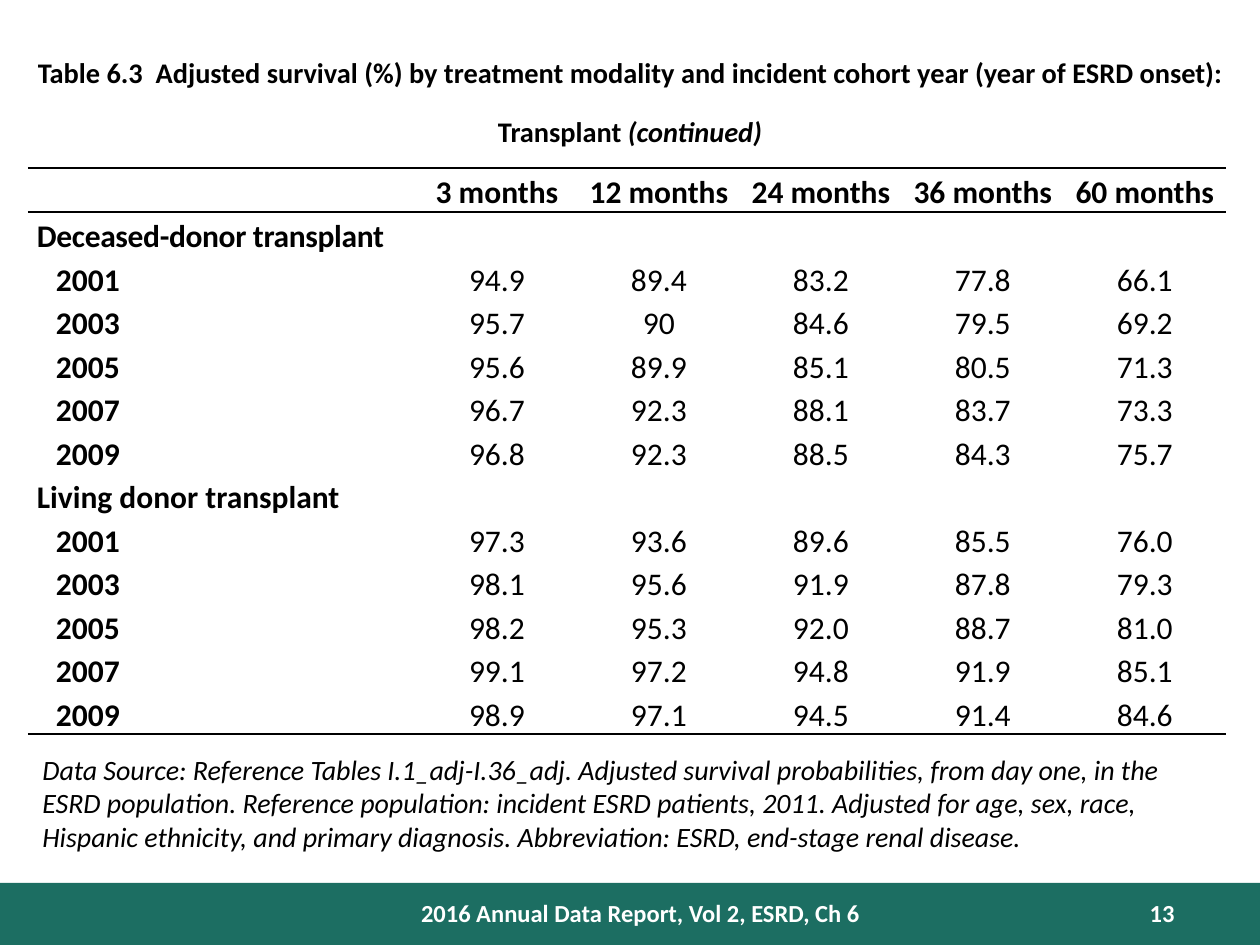
from dataclasses import dataclass

from lxml.etree import SubElement
from pptx import Presentation
from pptx.dml.color import RGBColor
from pptx.enum.shapes import MSO_SHAPE
from pptx.enum.text import MSO_ANCHOR, MSO_AUTO_SIZE, PP_ALIGN
from pptx.oxml.ns import qn
from pptx.util import Emu, Pt

PIXELS_PER_INCH = 126
FONT = "Calibri"
COLORS = {"text": "000000", "bar": "1C6E62", "bar_text": "FFFFFF"}
NO_GRID_STYLE = "{2D5ABB26-0587-4C30-8999-92F81FD0307C}"
LABEL_WIDTH, VALUE_WIDTH = 388, 162
HEADER_HEIGHT, ROW_HEIGHT = 44, 43
MONTHS = ["3 months", "12 months", "24 months", "36 months", "60 months"]


@dataclass
class Caption:
    text: str
    box: tuple[int, int, int, int]
    size: int
    color: str
    align: PP_ALIGN
    bold: bool = False
    italic: bool = False
    anchor: MSO_ANCHOR = MSO_ANCHOR.TOP


@dataclass
class Group:
    label: str
    spacing: int
    survival: dict[str, list[str]]


GROUPS = [
    Group("Deceased-donor transplant", -20, {
        "2001": ["94.9", "89.4", "83.2", "77.8", "66.1"],
        "2003": ["95.7", "90", "84.6", "79.5", "69.2"],
        "2005": ["95.6", "89.9", "85.1", "80.5", "71.3"],
        "2007": ["96.7", "92.3", "88.1", "83.7", "73.3"],
        "2009": ["96.8", "92.3", "88.5", "84.3", "75.7"],
    }),
    Group("Living donor transplant", 0, {
        "2001": ["97.3", "93.6", "89.6", "85.5", "76.0"],
        "2003": ["98.1", "95.6", "91.9", "87.8", "79.3"],
        "2005": ["98.2", "95.3", "92.0", "88.7", "81.0"],
        "2007": ["99.1", "97.2", "94.8", "91.9", "85.1"],
        "2009": ["98.9", "97.1", "94.5", "91.4", "84.6"],
    }),
]

CAPTIONS = [
    Caption("2016 Annual Data Report, Vol 2, ESRD, Ch 6", (399, 892, 483, 42), 14,
            "bar_text", PP_ALIGN.CENTER, bold=True, anchor=MSO_ANCHOR.MIDDLE),
    Caption("13", (1061, 894, 126, 38), 14,
            "bar_text", PP_ALIGN.RIGHT, bold=True, anchor=MSO_ANCHOR.MIDDLE),
    Caption("Data Source: Reference Tables I.1_adj-I.36_adj. Adjusted survival probabilities, "
            "from day one, in the ESRD population. Reference population: incident ESRD patients, "
            "2011. Adjusted for age, sex, race, Hispanic ethnicity, and primary diagnosis. "
            "Abbreviation: ESRD, end-stage renal disease.", (30, 746, 1198, 115), 16,
            "text", PP_ALIGN.LEFT, italic=True),
]


def px(length: int) -> Emu:
    return Emu(round(length * 914400 / PIXELS_PER_INCH))


def set_font(font, size: int, color: str, bold: bool = False, italic: bool = False) -> None:
    font.name = FONT
    font.size = Pt(size)
    font.bold = bold
    font.italic = italic
    font.color.rgb = RGBColor.from_string(COLORS[color])


def draw_bar(slide) -> None:
    bar = slide.shapes.add_shape(MSO_SHAPE.RECTANGLE, 0, px(883), px(1260), px(62))
    bar.shadow.inherit = False
    bar.fill.solid()
    bar.fill.fore_color.rgb = RGBColor.from_string(COLORS["bar"])
    bar.line.fill.background()


def draw_title(slide) -> None:
    title = slide.shapes.title
    title.left, title.top, title.width, title.height = map(px, (0, 43, 1260, 92))
    frame = title.text_frame
    frame.word_wrap = True
    frame.vertical_anchor = MSO_ANCHOR.TOP
    frame.auto_size = MSO_AUTO_SIZE.SHAPE_TO_FIT_TEXT
    paragraph = frame.paragraphs[0]
    paragraph.alignment = PP_ALIGN.CENTER
    heading = ("Table 6.3  Adjusted survival (%) by treatment modality and incident "
               "cohort year (year of ESRD onset): Transplant ")
    for text, italic in ((heading, False), ("(continued)", True)):
        run = paragraph.add_run()
        run.text = text
        set_font(run.font, 28, "text", bold=True, italic=italic)
        run._r.get_or_add_rPr().set("baseline", "30000")


def draw_caption(slide, caption: Caption) -> None:
    frame = slide.shapes.add_textbox(*map(px, caption.box)).text_frame
    frame.word_wrap = True
    frame.vertical_anchor = caption.anchor
    paragraph = frame.paragraphs[0]
    paragraph.text = caption.text
    paragraph.alignment = caption.align
    set_font(paragraph.font, caption.size, caption.color, caption.bold, caption.italic)


def add_border(cell, side: str) -> None:
    line = SubElement(cell._tc.get_or_add_tcPr(), qn(f"a:{side}"), w=str(Pt(1)))
    fill = SubElement(line, qn("a:solidFill"))
    SubElement(fill, qn("a:srgbClr"), val=COLORS["text"])


def write_cell(cell, text: str, bold: bool, align: PP_ALIGN, anchor: MSO_ANCHOR,
               indent: int = 0, spacing: int = 0) -> None:
    cell.vertical_anchor = anchor
    paragraph = cell.text_frame.paragraphs[0]
    paragraph.text = text
    paragraph.alignment = align
    paragraph.line_spacing = 1.15
    if indent:
        paragraph._p.get_or_add_pPr().set("marL", str(px(indent)))
    set_font(paragraph.font, 18, "text", bold)
    if spacing:
        paragraph.runs[0]._r.get_or_add_rPr().set("spc", str(spacing))


def draw_table(slide) -> None:
    row_count = 1 + sum(1 + len(group.survival) for group in GROUPS)
    column_count = 1 + len(MONTHS)
    width = LABEL_WIDTH + VALUE_WIDTH * len(MONTHS)
    height = HEADER_HEIGHT + ROW_HEIGHT * (row_count - 1)
    table = slide.shapes.add_table(
        row_count, column_count, px(28), px(168), px(width), px(height)).table
    table.first_row = table.horz_banding = False
    table._tbl.tblPr.find(qn("a:tableStyleId")).text = NO_GRID_STYLE
    for index, column in enumerate(table.columns):
        column.width = px(VALUE_WIDTH if index else LABEL_WIDTH)
    for index, row in enumerate(table.rows):
        row.height = px(ROW_HEIGHT if index else HEADER_HEIGHT)
        for cell in row.cells:
            cell.margin_left = cell.margin_right = px(9)
            cell.margin_top = cell.margin_bottom = 0
            if index == 0:
                add_border(cell, "lnT")
            if index in (0, row_count - 1):
                add_border(cell, "lnB")
            cell.fill.background()

    for column, month in enumerate(MONTHS, 1):
        write_cell(table.cell(0, column), month, True, PP_ALIGN.CENTER, MSO_ANCHOR.MIDDLE)
    row = 1
    for group in GROUPS:
        write_cell(table.cell(row, 0), group.label, True, PP_ALIGN.LEFT,
                   MSO_ANCHOR.MIDDLE, spacing=group.spacing)
        for row, (year, values) in enumerate(group.survival.items(), row + 1):
            write_cell(table.cell(row, 0), year, True, PP_ALIGN.LEFT,
                       MSO_ANCHOR.MIDDLE, indent=19)
            for column, value in enumerate(values, 1):
                write_cell(table.cell(row, column), value, False, PP_ALIGN.CENTER,
                           MSO_ANCHOR.BOTTOM)
        row += 1


def main() -> None:
    presentation = Presentation()
    presentation.slide_width = px(1260)
    presentation.slide_height = px(945)
    slide = presentation.slides.add_slide(presentation.slide_layouts[5])
    draw_bar(slide)
    draw_title(slide)
    for caption in CAPTIONS:
        draw_caption(slide, caption)
    draw_table(slide)
    presentation.save("out.pptx")


if __name__ == "__main__":
    main()
